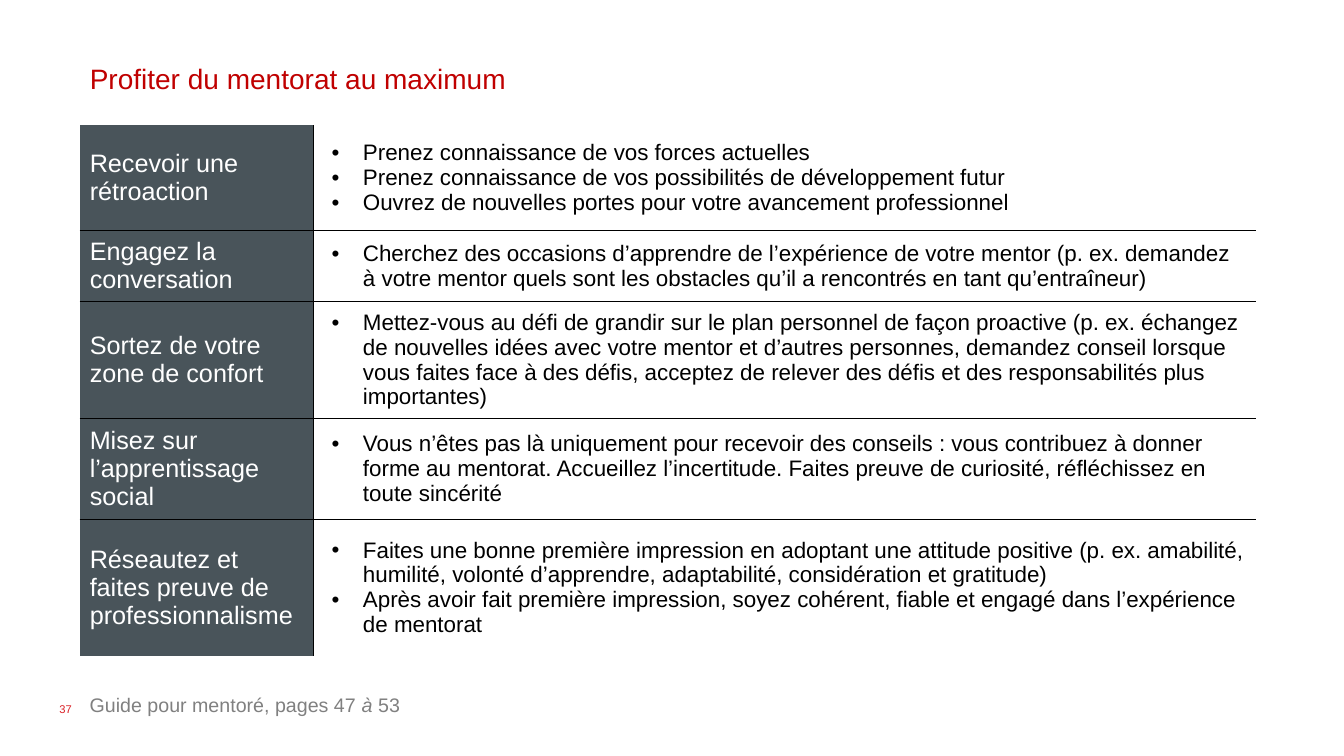
from dataclasses import dataclass

from lxml import etree
from pptx import Presentation
from pptx.dml.color import RGBColor
from pptx.enum import text
from pptx.oxml import ns
from pptx.util import Emu, Pt

PX = 9144  # 100 px to the inch


@dataclass(frozen=True)
class Theme:
    font: str = "Arial"
    title: str = "C00000"
    label: str = "FFFFFF"
    label_fill: str = "49545A"
    ink: str = "000000"
    guide: str = "808080"
    number: str = "DA2127"
    title_size: int = 20
    label_size: int = 18
    body_size: int = 16
    guide_size: int = 14
    number_size: int = 8


THEME = Theme()

# Row height, label, bullets
ADVICE = [
    (105, "Recevoir une rétroaction", [
        "Prenez connaissance de vos forces actuelles",
        "Prenez connaissance de vos possibilités de développement futur",
        "Ouvrez de nouvelles portes pour votre avancement professionnel"]),
    (70, "Engagez la conversation", [
        "Cherchez des occasions d’apprendre de l’expérience de votre mentor "
        "(p. ex. demandez à votre mentor quels sont les obstacles qu’il a "
        "rencontrés en tant qu’entraîneur)"]),
    (116, "Sortez de votre zone de confort", [
        "Mettez-vous au défi de grandir sur le plan personnel de façon proactive "
        "(p. ex. échangez de nouvelles idées avec votre mentor et d’autres "
        "personnes, demandez conseil lorsque vous faites face à des défis, "
        "acceptez de relever des défis et des responsabilités plus importantes)"]),
    (100, "Misez sur l’apprentissage social", [
        "Vous n’êtes pas là uniquement pour recevoir des conseils : vous "
        "contribuez à donner forme au mentorat. Accueillez l’incertitude. "
        "Faites preuve de curiosité, réfléchissez en toute sincérité"]),
    (136, "Réseautez et faites preuve de professionnalisme", [
        "Faites une bonne première impression en adoptant une attitude positive "
        "(p. ex. amabilité, humilité, volonté d’apprendre, adaptabilité, "
        "considération et gratitude)",
        "Après avoir fait première impression, soyez cohérent, fiable et engagé "
        "dans l’expérience de mentorat"]),
]


def px(*lengths):
    return [Emu(n * PX) for n in lengths]


def rgb(color):
    return RGBColor.from_string(color)


def write(p, words, size, color, italic=False):
    r = p.add_run()
    r.text = words
    f = r.font
    f.name, f.size, f.italic = THEME.font, Pt(size), italic
    f.color.rgb = rgb(color)


def add_bullet(p):
    pPr = p._p.get_or_add_pPr()
    indent, hanging = px(39, -31)
    pPr.set("marL", str(indent))
    pPr.set("indent", str(hanging))
    etree.SubElement(pPr, ns.qn("a:buFont"), typeface=THEME.font)
    etree.SubElement(pPr, ns.qn("a:buChar"), char="•")


def set_borders(cell, ruled):
    """Rule the named sides of a cell and clear the others."""
    tcPr = cell._tc.get_or_add_tcPr()
    for side in "LRTB":
        ln = etree.SubElement(tcPr, ns.qn(f"a:ln{side}"), w=str(Pt(1)))
        if side in ruled:
            fill = etree.SubElement(ln, ns.qn("a:solidFill"))
            etree.SubElement(fill, ns.qn("a:srgbClr"), val=THEME.ink)
        else:
            etree.SubElement(ln, ns.qn("a:noFill"))


def add_title(slide, box, words):
    sp = slide.shapes.title
    sp.left, sp.top, sp.width, sp.height = px(*box)
    tf = sp.text_frame
    tf.vertical_anchor = text.MSO_ANCHOR.TOP
    tf.auto_size = text.MSO_AUTO_SIZE.NONE
    p = tf.paragraphs[0]
    p.alignment = text.PP_ALIGN.LEFT
    write(p, words, THEME.title_size, THEME.title)


def add_label(slide, box, runs, size, color, anchor=text.MSO_ANCHOR.TOP):
    """Add a text box from (words, italic) runs."""
    tf = slide.shapes.add_textbox(*px(*box)).text_frame
    tf.word_wrap = True
    tf.vertical_anchor = anchor
    for words, italic in runs:
        write(tf.paragraphs[0], words, size, color, italic)


def add_advice_table(slide, box, label_width):
    table = slide.shapes.add_table(len(ADVICE), 2, *px(*box)).table
    table.first_row = table.horz_banding = False
    for column, width in zip(table.columns, px(label_width, box[2] - label_width)):
        column.width = width
    for i, (height, label, bullets) in enumerate(ADVICE):
        table.rows[i].height = px(height)[0]
        rules = ("T" if i else "") + ("B" if i < len(ADVICE) - 1 else "")
        label_cell, body_cell = table.cell(i, 0), table.cell(i, 1)
        for cell, inner_side in ((label_cell, "R"), (body_cell, "L")):
            set_borders(cell, rules + inner_side)
            cell.vertical_anchor = text.MSO_ANCHOR.MIDDLE
        label_cell.fill.solid()
        label_cell.fill.fore_color.rgb = rgb(THEME.label_fill)
        body_cell.fill.background()
        write(label_cell.text_frame.paragraphs[0], label,
              THEME.label_size, THEME.label)
        tf = body_cell.text_frame
        for n, words in enumerate(bullets):
            p = tf.add_paragraph() if n else tf.paragraphs[0]
            add_bullet(p)
            write(p, words, THEME.body_size, THEME.ink)


def add_footer(slide, box):
    left, top, width, height = box
    add_label(slide, (left + 30, top, width, 34),
              [("Guide pour mentoré, pages 47 ", False), ("à", True), (" 53", False)],
              THEME.guide_size, THEME.guide)
    add_label(slide, (left, top, 300, height), [("37", False)],
              THEME.number_size, THEME.number, text.MSO_ANCHOR.MIDDLE)


def main():
    prs = Presentation()
    prs.slide_width, prs.slide_height = px(1333, 750)
    slide = prs.slides.add_slide(prs.slide_layouts[5])
    add_title(slide, (79, 56, 942, 44), "Profiter du mentorat au maximum")
    add_advice_table(slide, (79, 124, 1167, 527), 232)
    add_footer(slide, (49, 683, 391, 40))
    prs.save("out.pptx")


if __name__ == "__main__":
    main()
